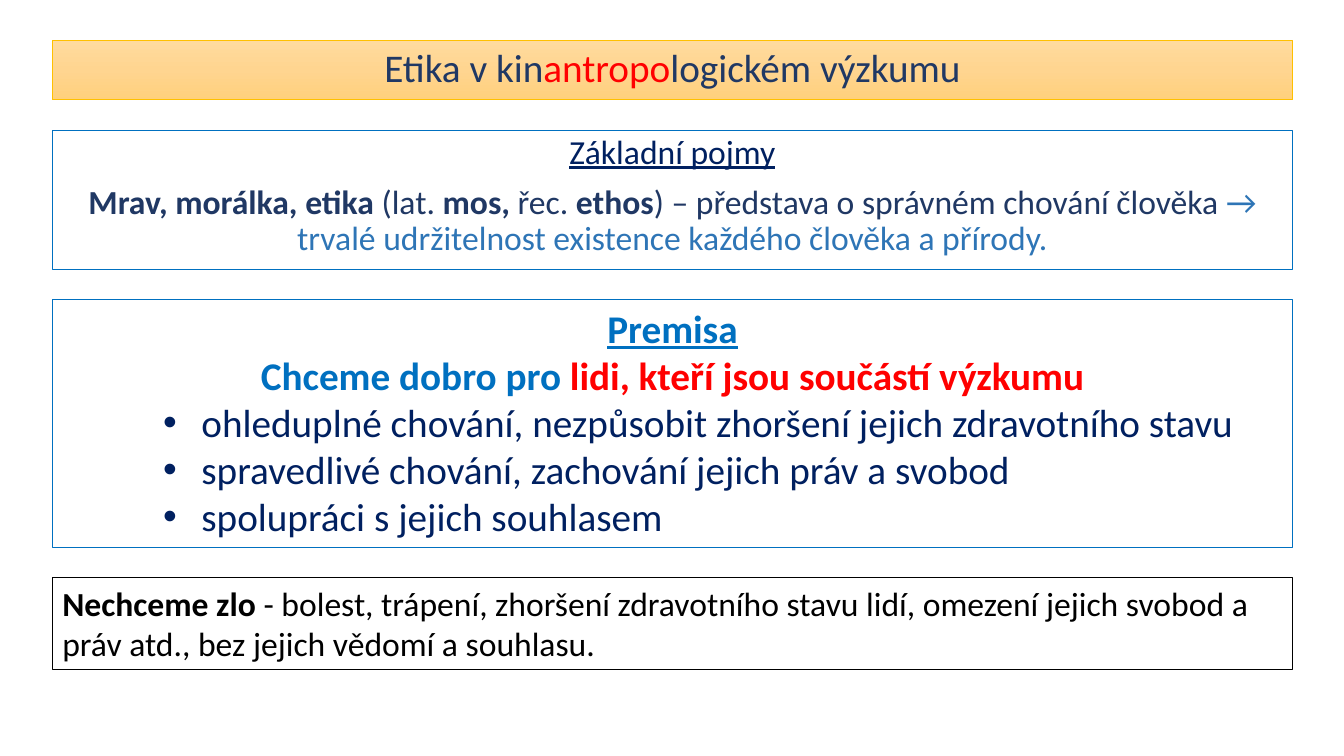
import copy
import dataclasses
import typing

import lxml.etree
import pptx
import pptx.dml.color
import pptx.enum.text
import pptx.oxml.ns
import pptx.slide
import pptx.text.text
import pptx.util

RGBColor = pptx.dml.color.RGBColor
Align = pptx.enum.text.PP_ALIGN

EMU_PER_PX = 9144  # 100 px to the inch
FONT = "Calibri"
LEFT, TOP, WIDTH, GAP = 52, 40, 1230, 30
BULLET_LEFT, BULLET_HANGING = 138, 38

NAVY = RGBColor(0x20, 0x38, 0x64)
DARK_BLUE = RGBColor(0x00, 0x20, 0x60)
BLUE = RGBColor(0x00, 0x70, 0xC0)
SOFT_BLUE = RGBColor(0x2E, 0x75, 0xB6)
RED = RGBColor(0xFF, 0x00, 0x00)
BLACK = RGBColor(0x00, 0x00, 0x00)
GOLD = RGBColor(0xFF, 0xC0, 0x00)
TITLE_GRADIENT = (
    RGBColor(0xFF, 0xDB, 0x9E),
    RGBColor(0xFF, 0xD5, 0x90),
    RGBColor(0xFF, 0xD0, 0x7C),
)


@dataclasses.dataclass(frozen=True)
class Run:
    text: str
    color: RGBColor
    bold: bool = False
    underline: bool = False


@dataclasses.dataclass(frozen=True)
class Paragraph:
    runs: tuple[Run, ...]
    align: Align = Align.CENTER
    bullet: bool = False


@dataclasses.dataclass(frozen=True)
class Panel:
    height: int
    line_color: RGBColor
    font_size: int
    paragraphs: tuple[Paragraph, ...]
    line_width: float = 0.75
    line_spacing: typing.Optional[float] = None
    space_before: int = 0
    gradient: tuple[RGBColor, ...] = ()
    centered: bool = False


def bullet_item(text: str) -> Paragraph:
    return Paragraph((Run(text, DARK_BLUE),), Align.LEFT, bullet=True)


PANELS = (
    # Title bar
    Panel(59, GOLD, 28, (
        Paragraph((
            Run("Etika v kin", NAVY),
            Run("antropo", RED),
            Run("logickém výzkumu", NAVY),
        )),
    ), line_width=0.5, line_spacing=0.9, gradient=TITLE_GRADIENT, centered=True),
    # Basic terms
    Panel(138, BLUE, 24, (
        Paragraph((Run("Základní pojmy", DARK_BLUE, underline=True),)),
        Paragraph((
            Run("Mrav, morálka, etika", NAVY, bold=True),
            Run(" (lat. ", NAVY),
            Run("mos, ", NAVY, bold=True),
            Run("řec. ", NAVY),
            Run("ethos", NAVY, bold=True),
            Run(") – představa o správném chování člověka ", NAVY),
            Run("→ trvalé udržitelnost existence každého člověka a přírody.", SOFT_BLUE),
        )),
    ), line_spacing=0.9, space_before=10),
    # Premise
    Panel(246, BLUE, 28, (
        Paragraph((Run("Premisa", BLUE, bold=True, underline=True),)),
        Paragraph((
            Run("Chceme dobro pro ", BLUE, bold=True),
            Run("lidi, kteří jsou součástí výzkumu", RED, bold=True),
        )),
        bullet_item("ohleduplné chování, nezpůsobit zhoršení jejich zdravotního stavu"),
        bullet_item("spravedlivé chování, zachování jejich práv a svobod"),
        bullet_item("spolupráci s jejich souhlasem"),
    )),
    # What to avoid
    Panel(91, BLACK, 24, (
        Paragraph((
            Run("Nechceme zlo ", BLACK, bold=True),
            Run("- bolest, trápení, zhoršení zdravotního stavu lidí, omezení jejich "
                "svobod a práv atd., bez jejich vědomí a souhlasu.", BLACK),
        ), Align.LEFT),
    )),
)


def px(length: int) -> pptx.util.Emu:
    return pptx.util.Emu(length * EMU_PER_PX)


def fill_gradient(fill: pptx.dml.fill.FillFormat, colors: tuple[RGBColor, ...]) -> None:
    fill.gradient()
    fill.gradient_angle = 270
    first = fill._xPr.find(".//" + pptx.oxml.ns.qn("a:gs"))
    for _ in range(len(colors) - len(fill.gradient_stops)):
        first.addnext(copy.deepcopy(first))
    for index, (stop, color) in enumerate(zip(fill.gradient_stops, colors)):
        stop.position = index / (len(colors) - 1)
        stop.color.rgb = color


def add_bullet(paragraph: pptx.text.text._Paragraph) -> None:
    paragraph.level = 2
    properties = paragraph._p.get_or_add_pPr()
    properties.set("marL", str(px(BULLET_LEFT)))
    properties.set("indent", str(px(-BULLET_HANGING)))
    for tag, name, value in (("a:buFont", "typeface", "Arial"), ("a:buChar", "char", "•")):
        lxml.etree.SubElement(properties, pptx.oxml.ns.qn(tag)).set(name, value)


def draw_panel(slide: pptx.slide.Slide, panel: Panel, top: int) -> None:
    shape = slide.shapes.add_textbox(px(LEFT), px(top), px(WIDTH), px(panel.height))
    shape.line.color.rgb = panel.line_color
    shape.line.width = pptx.util.Pt(panel.line_width)
    if panel.gradient:
        fill_gradient(shape.fill, panel.gradient)

    frame = shape.text_frame
    frame.word_wrap = True
    anchor = pptx.enum.text.MSO_ANCHOR
    frame.vertical_anchor = anchor.MIDDLE if panel.centered else anchor.TOP

    for index, content in enumerate(panel.paragraphs):
        paragraph = frame.add_paragraph() if index else frame.paragraphs[0]
        paragraph.alignment = content.align
        paragraph.line_spacing = panel.line_spacing
        paragraph.space_before = pptx.util.Pt(panel.space_before)
        if content.bullet:
            add_bullet(paragraph)
        for part in content.runs:
            run = paragraph.add_run()
            run.text = part.text
            run.font.name = FONT
            run.font.size = pptx.util.Pt(panel.font_size)
            run.font.color.rgb = part.color
            run.font.bold = part.bold
            run.font.underline = part.underline


def main() -> None:
    presentation = pptx.Presentation()
    presentation.slide_width = pptx.util.Inches(13.33)
    presentation.slide_height = pptx.util.Inches(7.5)
    slide = presentation.slides.add_slide(presentation.slide_layouts[6])

    # Stack the panels with equal gaps
    top = TOP
    for panel in PANELS:
        draw_panel(slide, panel, top)
        top += panel.height + GAP

    presentation.save("out.pptx")


if __name__ == "__main__":
    main()
